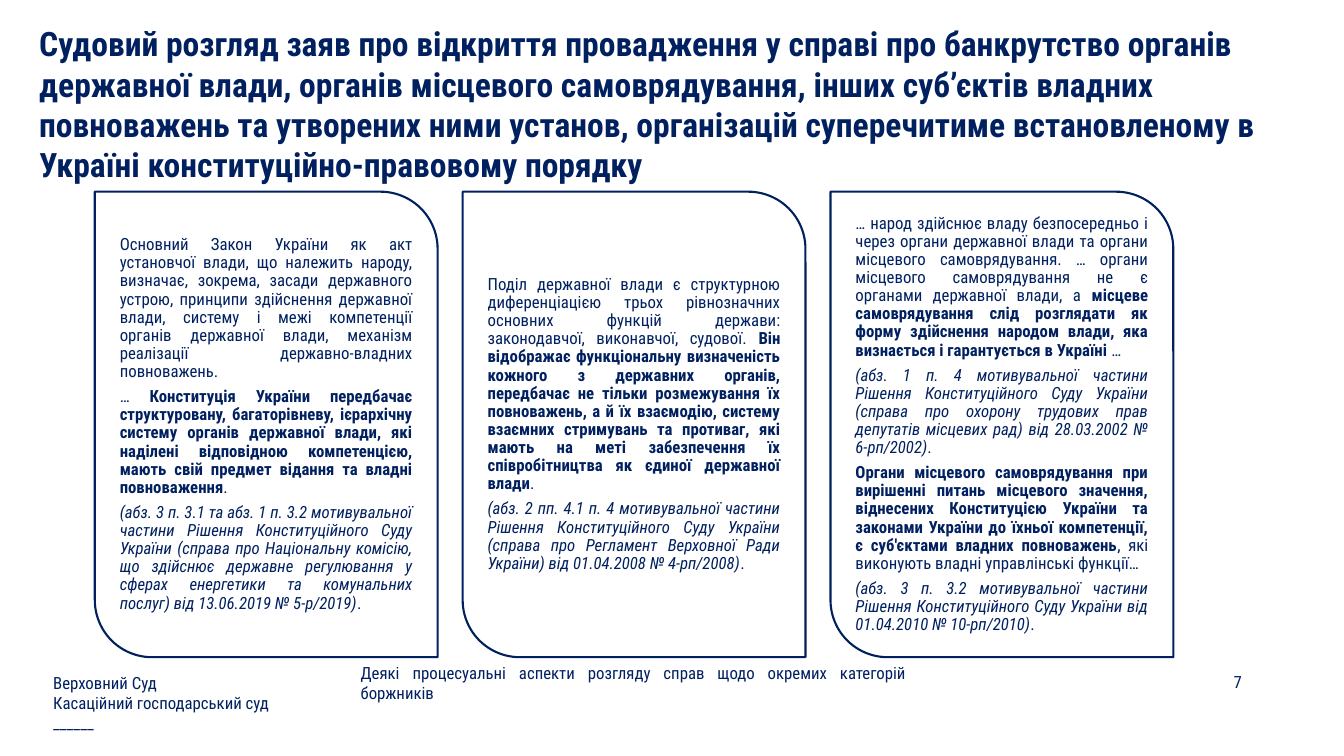
from pptx import Presentation
from pptx.dml.color import RGBColor
from pptx.enum.shapes import MSO_SHAPE
from pptx.enum.text import MSO_ANCHOR, MSO_AUTO_SIZE, PP_ALIGN
from pptx.util import Cm, Pt

NAVY = "002060"
WHITE = "FFFFFF"
FONT = "Roboto Condensed"
PLAIN = {}
BOLD = {"bold": True}
ITALIC = {"italic": True}
JUSTIFIED = {"alignment": PP_ALIGN.JUSTIFY}
CARD_PARA = {**JUSTIFIED, "line_spacing": 0.9, "space_after": Pt(4.9)}
MIDDLE = {"vertical_anchor": MSO_ANCHOR.MIDDLE}
CARD_FRAME = {**MIDDLE, "margin_left": Cm(0.2), "margin_right": Cm(0.2),
              "margin_top": 0, "margin_bottom": 0}

TITLE = (
    "Судовий розгляд заяв про відкриття провадження у справі про банкрутство органів "
    "державної влади, органів місцевого самоврядування, інших суб’єктів владних "
    "повноважень та утворених ними установ, організацій суперечитиме встановленому в "
    "Україні конституційно-правовому порядку"
)
CARDS = [
    [
        [("Основний Закон України як акт установчої влади, що належить народу, визначає, "
          "зокрема, засади державного устрою, принципи здійснення державної влади, систему і "
          "межі компетенції органів державної влади, механізм реалізації державно-владних "
          "повноважень. ", PLAIN)],
        [("… ", PLAIN),
         ("Конституція України передбачає структуровану, багаторівневу, ієрархічну систему "
          "органів державної влади, які наділені відповідною компетенцією, мають свій предмет "
          "відання та владні повноваження", BOLD),
         (".", PLAIN)],
        [("(абз. 3 п. 3.1 та абз. 1 п. 3.2 мотивувальної частини Рішення Конституційного Суду "
          "України (справа про Національну комісію, що здійснює державне регулювання у сферах "
          "енергетики та комунальних послуг) від 13.06.2019 № 5-р/2019)", ITALIC),
         (".", PLAIN)],
    ],
    [
        [("Поділ державної влади є структурною диференціацією трьох рівнозначних основних "
          "функцій держави: законодавчої, виконавчої, судової. ", PLAIN),
         ("Він відображає функціональну визначеність кожного з державних органів, передбачає "
          "не тільки розмежування їх повноважень, а й їх взаємодію, систему взаємних стримувань "
          "та противаг, які мають на меті забезпечення їх співробітництва як єдиної державної "
          "влади", BOLD),
         (".", PLAIN)],
        [("(абз. 2 пп. 4.1 п. 4 мотивувальної частини Рішення Конституційного Суду України "
          "(справа про Регламент Верховної Ради України) від 01.04.2008 № 4-рп/2008)", ITALIC),
         (".", PLAIN)],
    ],
    [
        [("… народ здійснює владу безпосередньо і через органи державної влади та органи "
          "місцевого самоврядування. … органи місцевого самоврядування не є органами державної "
          "влади, а ", PLAIN),
         ("місцеве самоврядування слід розглядати як форму здійснення народом влади, яка "
          "визнається і гарантується в Україні ", BOLD),
         ("… ", PLAIN)],
        [("(абз. 1 п. 4 мотивувальної частини Рішення Конституційного Суду України (справа про "
          "охорону трудових прав депутатів місцевих рад) від 28.03.2002 № 6-рп/2002)", ITALIC),
         (".", PLAIN)],
        [("Органи місцевого самоврядування при вирішенні питань місцевого значення, віднесених "
          "Конституцією України та законами України до їхньої компетенції, є суб'єктами владних "
          "повноважень", BOLD),
         (", які виконують владні управлінські функції…", PLAIN)],
        [("(абз. 3 п. 3.2 мотивувальної частини Рішення Конституційного Суду України від "
          "01.04.2010 № 10-рп/2010)", ITALIC),
         (".", PLAIN)],
    ],
]


def paint(color_format, hex_color):
    color_format.rgb = RGBColor.from_string(hex_color)


def apply(target, values):
    for name, value in values.items():
        setattr(target, name, value)


def add_text(shapes, box, paragraphs, size=12, frame_format=MIDDLE, para_format=PLAIN):
    frame = shapes.add_textbox(*map(Cm, box)).text_frame
    apply(frame, {"word_wrap": True, **frame_format})
    for index, runs in enumerate(paragraphs):
        para = frame.add_paragraph() if index else frame.paragraphs[0]
        apply(para, para_format)
        for text, style in runs:
            span = para.add_run()
            span.text = text
            apply(span.font, {"name": FONT, "size": Pt(size), **style})
            paint(span.font.color, NAVY)


def add_title(page, box):
    add_text(page.shapes, box, [[(TITLE, BOLD)]], 24,
             {"auto_size": MSO_AUTO_SIZE.SHAPE_TO_FIT_TEXT})


def add_card(page, box, paragraphs):
    left, top, width, height = box
    shapes = page.shapes.add_group_shape().shapes
    shift = (height - width) / 2
    outline = shapes.add_shape(MSO_SHAPE.ROUND_2_DIAG_RECTANGLE,
                               *map(Cm, (left - shift, top + shift, height, width)))
    outline.rotation = 270
    outline.shadow.inherit = False
    outline.fill.solid()
    paint(outline.fill.fore_color, WHITE)
    paint(outline.line.color, NAVY)
    outline.line.width = Pt(1.5)
    inset = 0.43
    inner = (left + inset, top + inset, width - 2 * inset, height - 2 * inset)
    add_text(shapes, inner, paragraphs, 12, CARD_FRAME, CARD_PARA)


def add_cards(page, box, gap):
    left, top, width, height = box
    card_width = (width - gap * (len(CARDS) - 1)) / len(CARDS)
    for index, paragraphs in enumerate(CARDS):
        card_left = left + index * (card_width + gap)
        add_card(page, (card_left, top, card_width, height), paragraphs)


def add_footer(page, box):
    left, top, width, height = box
    court = ["Верховний Суд", "Касаційний господарський суд", "______"]
    topic = "Деякі процесуальні аспекти розгляду справ щодо окремих категорій боржників"
    add_text(page.shapes, (left, top, 6.45, height), [[(line, PLAIN)] for line in court])
    add_text(page.shapes, (left + 7.75, top, 14.25, 0.89), [[(topic, PLAIN)]],
             para_format=JUSTIFIED)
    add_text(page.shapes, (left + width - 7.62, top, 7.62, 0.84), [[("7", PLAIN)]],
             para_format={"alignment": PP_ALIGN.RIGHT})


def main():
    deck = Presentation()
    deck.slide_width, deck.slide_height = Cm(33.87), Cm(19.05)
    page = deck.slides.add_slide(deck.slide_layouts[6])
    add_footer(page, (1.09, 16.76, 30.46, 1.9))
    add_title(page, (0.74, 0.46, 31.47, 4.37))
    add_cards(page, (2.39, 4.83, 27.18, 11.73), 0.63)
    deck.save("out.pptx")


if __name__ == "__main__":
    main()
